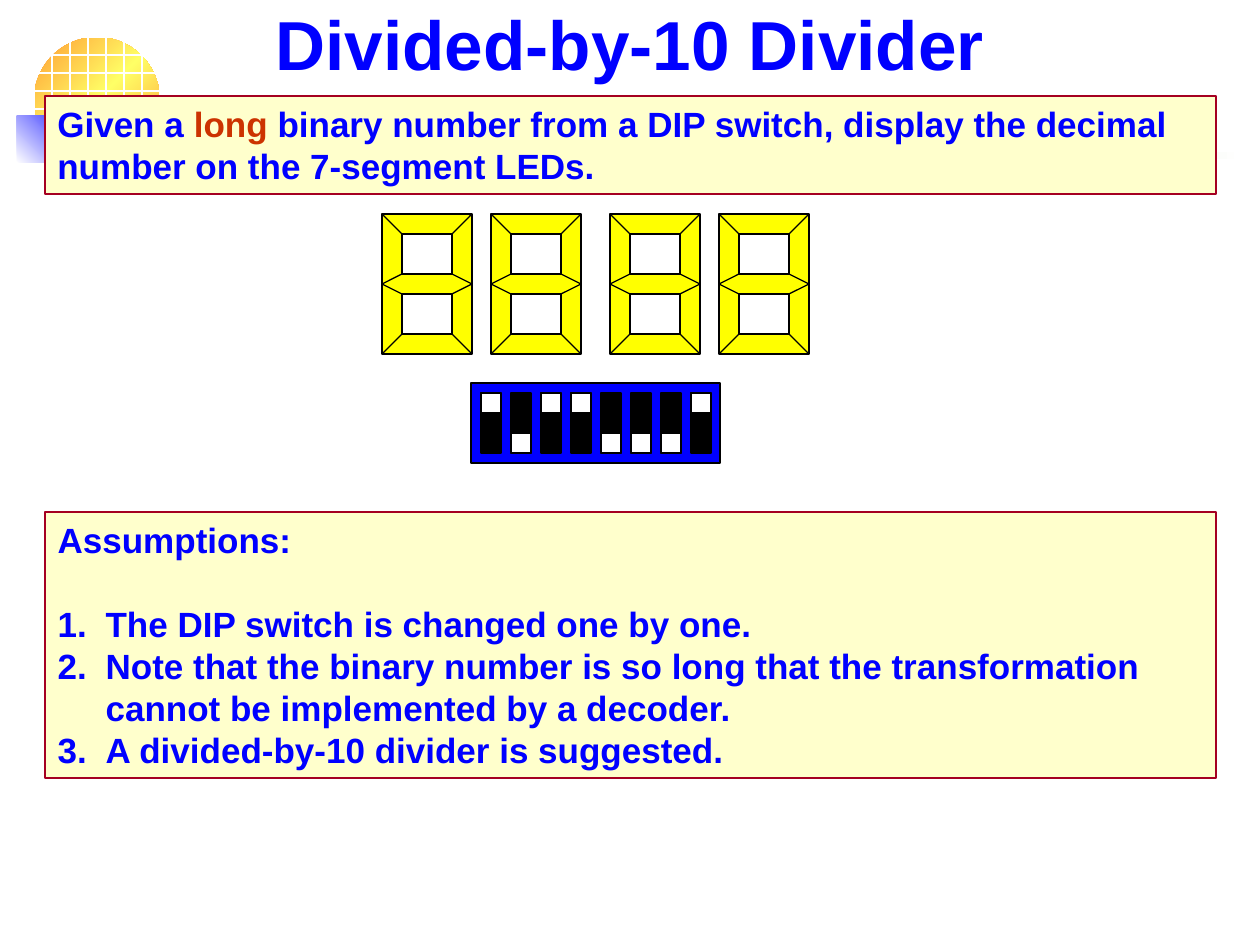
"""Build the divided-by-10 divider slide."""
from lxml import etree
from pptx import Presentation
from pptx.dml.color import RGBColor
from pptx.enum.shapes import MSO_CONNECTOR, MSO_SHAPE
from pptx.enum.text import MSO_ANCHOR, MSO_AUTO_SIZE, PP_ALIGN
from pptx.oxml.ns import qn
from pptx.util import Pt

RECT, OVAL = MSO_SHAPE.RECTANGLE, MSO_SHAPE.OVAL
STRAIGHT = MSO_CONNECTOR.STRAIGHT
TOP, MIDDLE = MSO_ANCHOR.TOP, MSO_ANCHOR.MIDDLE
NO_FIT = MSO_AUTO_SIZE.NONE
LEFT, CENTER = PP_ALIGN.LEFT, PP_ALIGN.CENTER

BLUE = RGBColor(0x00, 0x00, 0xFF)
RED = RGBColor(0xCC, 0x33, 0x00)
MAROON = RGBColor(0xA5, 0x00, 0x21)
CREAM = RGBColor(0xFF, 0xFF, 0xCC)
YELLOW = RGBColor(0xFF, 0xFF, 0x00)
BLACK = RGBColor(0x00, 0x00, 0x00)
WHITE = RGBColor(0xFF, 0xFF, 0xFF)
ORANGE = RGBColor(0xFF, 0x99, 0x33)
LEMON = RGBColor(0xFF, 0xFF, 0x66)
GREEN = RGBColor(0x77, 0x93, 0x3C)

FONT = "Arial"
SCALE = 914400 / 126
GRID = 18
SUN_ROWS = (7, 4, 4, 4, 4, 4, 4)
DIGIT_LEFTS = (610, 719, 491, 382)
DIGIT_LINES = (
    (20, 60, 0, 70), (0, 70, 20, 80), (0, 0, 20, 20), (70, 120, 90, 140),
    (90, 0, 70, 20), (20, 120, 0, 140), (70, 60, 90, 70), (90, 70, 70, 80),
)
SWITCHES = "10110001"
ASSUMPTIONS = (
    "The DIP switch is changed one by one.",
    "Note that the binary number is so long that the transformation "
    "cannot be implemented by a decoder.",
    "A divided-by-10 divider is suggested.",
)


def px(n):
    """Turn whole pixels into EMU."""
    return round(n * SCALE)


def style(sp, fill, line):
    if fill is None:
        sp.fill.background()
    else:
        sp.fill.solid()
        sp.fill.fore_color.rgb = fill
    if line is None:
        sp.line.fill.background()
    else:
        sp.line.color.rgb = line
        sp.line.width = Pt(0.75)


def add_box(shapes, x, y, w, h, fill=None, line=None, kind=RECT):
    sp = shapes.add_shape(kind, px(x), px(y), px(w), px(h))
    sp.shadow.inherit = False
    style(sp, fill, line)
    return sp


def add_gradient(sp, stops, angle):
    pr = sp.fill._xPr
    pr.remove(pr.find(qn("a:solidFill")))
    grad = etree.Element(qn("a:gradFill"), rotWithShape="1")
    gs_list = etree.SubElement(grad, qn("a:gsLst"))
    for pos, color in stops:
        gs = etree.SubElement(gs_list, qn("a:gs"), pos=str(pos * 1000))
        etree.SubElement(gs, qn("a:srgbClr"), val=str(color))
    etree.SubElement(grad, qn("a:lin"), ang=str(angle * 60000), scaled="0")
    pr.find(qn("a:prstGeom")).addnext(grad)


def add_line(shapes, x1, y1, x2, y2):
    cn = shapes.add_connector(STRAIGHT, px(x1), px(y1), px(x2), px(y2))
    cn.line.color.rgb = BLACK
    cn.line.width = Pt(0.75)
    etree.SubElement(cn._element.spPr, qn("a:effectLst"))


def add_run(p, text, color=BLUE, size=20):
    r = p.add_run()
    r.text = text
    r.font.name = FONT
    r.font.size = Pt(size)
    r.font.bold = True
    r.font.color.rgb = color


def format_paragraph(p, align=LEFT, after=0):
    p.alignment = align
    p.line_spacing = 1.0
    p.space_before = Pt(0)
    p.space_after = Pt(after)


def format_frame(tf, anchor=TOP):
    tf.word_wrap = True
    tf.auto_size = NO_FIT
    tf.vertical_anchor = anchor


def set_bullet(p, numbered):
    pr = p._p.get_or_add_pPr()
    pr.set("marL", str(px(48)))
    pr.set("indent", str(px(-48)))
    if numbered:
        etree.SubElement(pr, qn("a:buFont"), typeface="+mj-lt")
        etree.SubElement(pr, qn("a:buAutoNum"), type="arabicPeriod")
    else:
        etree.SubElement(pr, qn("a:buNone"))


def place(sp, x, y, w, h):
    sp.left, sp.top, sp.width, sp.height = px(x), px(y), px(w), px(h)


def add_title(s):
    sp = s.shapes.title
    place(sp, 0, 0, 1260, 86)
    format_frame(sp.text_frame, MIDDLE)
    p = sp.text_frame.paragraphs[0]
    format_paragraph(p, CENTER)
    add_run(p, "Divided-by-10 Divider", size=39.6)


def add_sun(shapes):
    disc = add_box(shapes, 34, 37, 126, 126, WHITE, kind=OVAL)
    add_gradient(disc, ((0, ORANGE), (50, LEMON), (100, ORANGE)), 45)
    for col, rows in enumerate(SUN_ROWS):
        for row in range(rows):
            add_box(shapes, 34 + GRID * col, 37 + GRID * row, GRID, GRID, line=WHITE)


def add_bars(shapes):
    bar = add_box(shapes, 17, 116, 77, 47, WHITE)
    add_gradient(bar, ((0, WHITE), (100, BLUE)), 315)
    rule = add_box(shapes, 44, 152, 1198, 7, WHITE)
    add_gradient(rule, ((39, GREEN), (100, WHITE)), 0)


def add_task(s):
    sp = add_box(s.shapes, 45, 96, 1171, 98, CREAM, MAROON)
    format_frame(sp.text_frame)
    p = sp.text_frame.paragraphs[0]
    format_paragraph(p)
    add_run(p, "Given a ")
    add_run(p, "long", RED)
    add_run(p, " binary number from a DIP switch, display the decimal "
               "number on the 7-segment LEDs.")


def add_digit(shapes, x, y):
    add_box(shapes, x, y, 90, 140, YELLOW, BLACK)
    for dy in (20, 80):
        add_box(shapes, x + 20, y + dy, 50, 40, WHITE, BLACK)
    for x1, y1, x2, y2 in DIGIT_LINES:
        add_line(shapes, x + x1, y + y1, x + x2, y + y2)


def add_dip_switch(shapes, x, y):
    add_box(shapes, x, y, 249, 80, BLUE, BLACK)
    for i, state in enumerate(SWITCHES):
        left, top = x + 10 + 30 * i, y + 10
        add_box(shapes, left, top, 20, 60, BLACK, BLACK)
        knob = top if state == "1" else top + 40
        add_box(shapes, left, knob, 20, 20, WHITE, BLACK)


def add_assumptions(s):
    sp = s.placeholders[1]
    place(sp, 45, 512, 1171, 266)
    style(sp, CREAM, MAROON)
    tf = sp.text_frame
    format_frame(tf)
    p = tf.paragraphs[0]
    format_paragraph(p, after=24)
    set_bullet(p, False)
    add_run(p, "Assumptions:")
    for text in ASSUMPTIONS:
        p = tf.add_paragraph()
        format_paragraph(p)
        set_bullet(p, True)
        add_run(p, text)


def main():
    prs = Presentation()
    prs.slide_width, prs.slide_height = px(1260), px(945)
    s = prs.slides.add_slide(prs.slide_layouts[1])
    add_title(s)
    add_sun(s.shapes.add_group_shape().shapes)
    add_bars(s.shapes.add_group_shape().shapes)
    add_task(s)
    display = s.shapes.add_group_shape().shapes
    for x in DIGIT_LEFTS:
        add_digit(display, x, 214)
    add_dip_switch(display, 471, 383)
    add_assumptions(s)
    prs.save("out.pptx")


if __name__ == "__main__":
    main()
